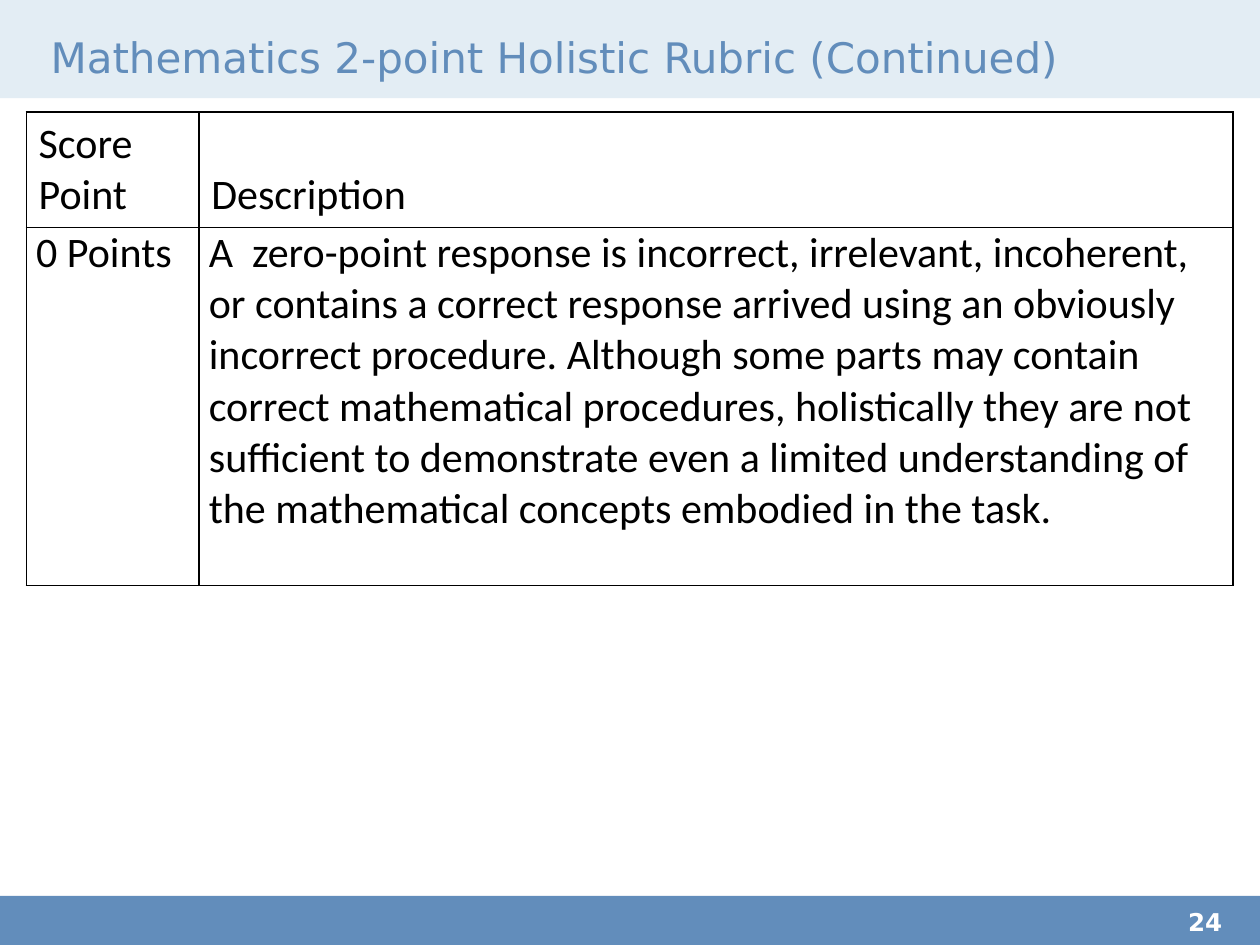
"""Build the zero-point page of a mathematics holistic rubric."""
from lxml.etree import SubElement
from pptx import Presentation
from pptx.dml.color import RGBColor
from pptx.enum.shapes import MSO_SHAPE as Shape
from pptx.enum.text import MSO_ANCHOR as Anchor, MSO_AUTO_SIZE as AutoSize, PP_ALIGN as Align
from pptx.oxml.ns import qn
from pptx.util import Cm, Pt

HEADING = "Mathematics 2-point Holistic Rubric (Continued)"
PAGE_NUMBER = "24"
RUBRIC = [
    ("Score Point", "Description"),
    ("0 Points",
     "A  zero-point response is incorrect, irrelevant, incoherent, or contains "
     "a correct response arrived using an obviously incorrect procedure. "
     "Although some parts may contain correct mathematical procedures, "
     "holistically they are not sufficient to demonstrate even a limited "
     "understanding of the mathematical concepts embodied in the task."),
]
COLUMN_WIDTHS = [3.48, 20.85]
ROW_HEIGHTS = [2.32, 7.22]
CELL_STYLES = [(Anchor.BOTTOM, 0.25, 0.13), (Anchor.TOP, 0.2, 0)]
BLUE, PALE, WHITE, BLACK = "628DBB", "E3EDF4", "FFFFFF", "000000"
BANDS = [(0, 1.98, PALE), (18.06, 0.99, BLUE)]
WIDTH, HEIGHT = 25.4, 19.05


def paint(color, hex_code):
    color.rgb = RGBColor.from_string(hex_code)


def style_text(frame, font_name, size, hex_code, bold=False):
    frame.word_wrap = True
    for paragraph in frame.paragraphs:
        paragraph.alignment = Align.LEFT
        for run in paragraph.runs:
            run.font.name, run.font.size, run.font.bold = font_name, Pt(size), bold
            paint(run.font.color, hex_code)


def set_margins(target, left, top, right, bottom):
    target.margin_left, target.margin_top = Cm(left), Cm(top)
    target.margin_right, target.margin_bottom = Cm(right), Cm(bottom)


def add_borders(cell, hex_code):
    properties = cell._tc.get_or_add_tcPr()
    for index, side in enumerate(("lnL", "lnR", "lnT", "lnB")):
        border = SubElement(properties, qn(f"a:{side}"), w=str(Pt(1)))
        fill = SubElement(border, qn("a:solidFill"))
        SubElement(fill, qn("a:srgbClr"), val=hex_code)
        properties.insert(index, border)


def add_bands(slide):
    for top, height, hex_code in BANDS:
        band = slide.shapes.add_shape(Shape.RECTANGLE, 0, Cm(top), Cm(WIDTH), Cm(height))
        band.shadow.inherit = False
        band.fill.solid()
        paint(band.fill.fore_color, hex_code)
        band.line.fill.background()
        slide.shapes._spTree.insert(2, band._element)


def add_heading(slide):
    heading = slide.shapes.title
    heading.left, heading.top, heading.width, heading.height = Cm(1.02), Cm(0.58), Cm(22.86), Cm(1.24)
    frame = heading.text_frame
    frame.text = HEADING
    frame.auto_size = AutoSize.NONE
    frame.vertical_anchor = Anchor.MIDDLE
    set_margins(frame, 0, 0, 0.25, 0.13)
    style_text(frame, "DejaVu Sans", 24, BLUE)


def add_rubric(slide):
    rubric = slide.shapes.add_table(
        len(RUBRIC), len(COLUMN_WIDTHS), Cm(0.53), Cm(2.26),
        Cm(sum(COLUMN_WIDTHS)), Cm(sum(ROW_HEIGHTS))).table
    rubric.first_row = rubric.horz_banding = False
    for column, width in zip(rubric.columns, COLUMN_WIDTHS):
        column.width = Cm(width)
    for row, height, entries, (anchor, side, edge) in zip(
            rubric.rows, ROW_HEIGHTS, RUBRIC, CELL_STYLES):
        row.height = Cm(height)
        for cell, entry in zip(row.cells, entries):
            cell.text_frame.text = entry
            cell.vertical_anchor = anchor
            set_margins(cell, side, edge, side, edge)
            cell.fill.background()
            add_borders(cell, BLACK)
            style_text(cell.text_frame, "Calibri", 24, BLACK)


def add_page_number(slide):
    frame = slide.shapes.add_textbox(Cm(23.95), Cm(18.29), Cm(1.45), Cm(0.76)).text_frame
    frame.text = PAGE_NUMBER
    set_margins(frame, 0, 0, 0, 0)
    style_text(frame, "DejaVu Sans", 14, WHITE, bold=True)


def main():
    deck = Presentation()
    deck.slide_width, deck.slide_height = Cm(WIDTH), Cm(HEIGHT)
    slide = deck.slides.add_slide(deck.slide_layouts[5])
    add_bands(slide)
    add_heading(slide)
    add_rubric(slide)
    add_page_number(slide)
    deck.save("out.pptx")


if __name__ == "__main__":
    main()
